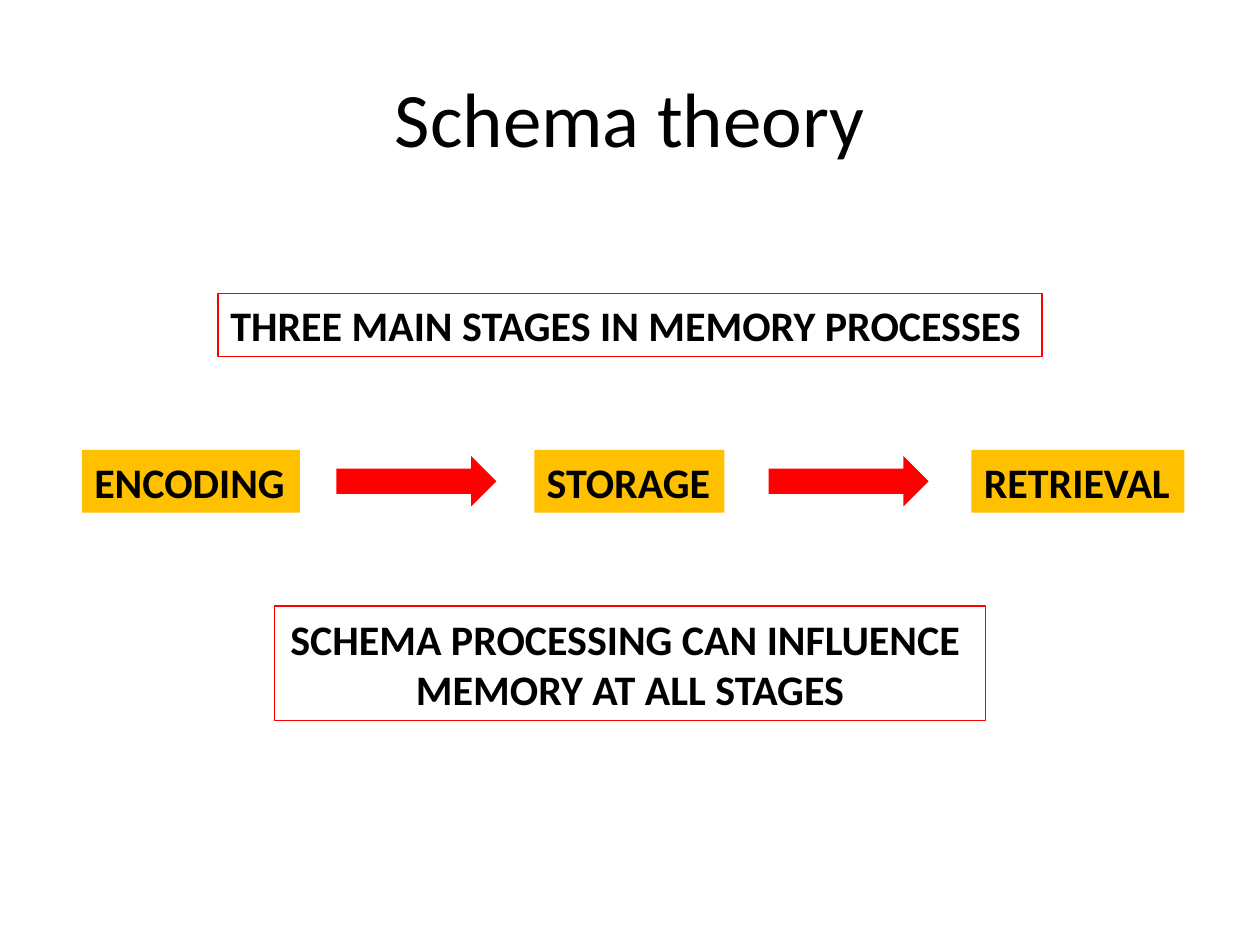
from dataclasses import dataclass

from pptx import Presentation
from pptx.dml.color import RGBColor
from pptx.enum.shapes import MSO_SHAPE as Shape
from pptx.enum.text import MSO_ANCHOR as Anchor, PP_ALIGN as Align
from pptx.slide import Slide
from pptx.util import Inches, Pt


def color(hex_string):
    return RGBColor.from_string(hex_string)


@dataclass
class SchemaSlide:
    """Holds the style and the current slide and draws each kind of element."""

    slide: Slide
    font: str = "Calibri"
    ink: str = "000000"
    accent: str = "FF0000"
    stage_fill: str = "FFC000"

    def add_text(self, shape, lines, size, bold, align):
        frame = shape.text_frame
        frame.word_wrap = True
        paragraph = frame.paragraphs[0]
        paragraph.alignment = align
        for index, line in enumerate(lines):
            if index:
                paragraph.add_line_break()
            run = paragraph.add_run()
            run.text = line
            run.font.name = self.font
            run.font.size = Pt(size)
            run.font.bold = bold
            run.font.color.rgb = color(self.ink)

    def block(self, kind, left, top, width, height, fill=None, line=None):
        shape = self.slide.shapes.add_shape(
            kind, Inches(left), Inches(top), Inches(width), Inches(height))
        shape.shadow.inherit = False
        if fill:
            shape.fill.solid()
            shape.fill.fore_color.rgb = color(fill)
        else:
            shape.fill.background()
        if line:
            shape.line.color.rgb = color(line)
            shape.line.width = Pt(0.75)
        else:
            shape.line.fill.background()
        return shape

    def title(self, text):
        box = self.slide.shapes.add_textbox(
            Inches(0.5), Inches(0.3), Inches(9), Inches(1.25))
        self.add_text(box, [text], 44, False, Align.CENTER)
        box.text_frame.vertical_anchor = Anchor.MIDDLE

    def stage(self, text, left, width):
        shape = self.block(Shape.RECTANGLE, left, 3.57, width, 0.5, fill=self.stage_fill)
        self.add_text(shape, [text], 24, True, Align.LEFT)

    def arrow(self, left):
        self.block(Shape.RIGHT_ARROW, left, 3.62, 1.27, 0.4, fill=self.accent)

    def statement(self, lines, top, width, height, align):
        left = (10 - width) / 2
        shape = self.block(Shape.RECTANGLE, left, top, width, height, line=self.accent)
        self.add_text(shape, lines, 24, True, align)


def main():
    presentation = Presentation()
    presentation.slide_width = Inches(10)
    presentation.slide_height = Inches(7.5)
    page = SchemaSlide(presentation.slides.add_slide(presentation.slide_layouts[6]))

    page.title("Schema theory")
    stages = [("ENCODING", 0.65, 1.73), ("STORAGE", 4.24, 1.51), ("RETRIEVAL", 7.71, 1.69)]
    for text, left, width in stages:
        page.stage(text, left, width)
    for left in (2.67, 6.1):
        page.arrow(left)
    page.statement(["THREE MAIN STAGES IN MEMORY PROCESSES"], 2.33, 6.54, 0.5, Align.LEFT)
    page.statement(["SCHEMA PROCESSING CAN INFLUENCE ", "MEMORY AT ALL STAGES"],
                   4.81, 5.64, 0.91, Align.CENTER)
    presentation.save("out.pptx")


if __name__ == "__main__":
    main()
